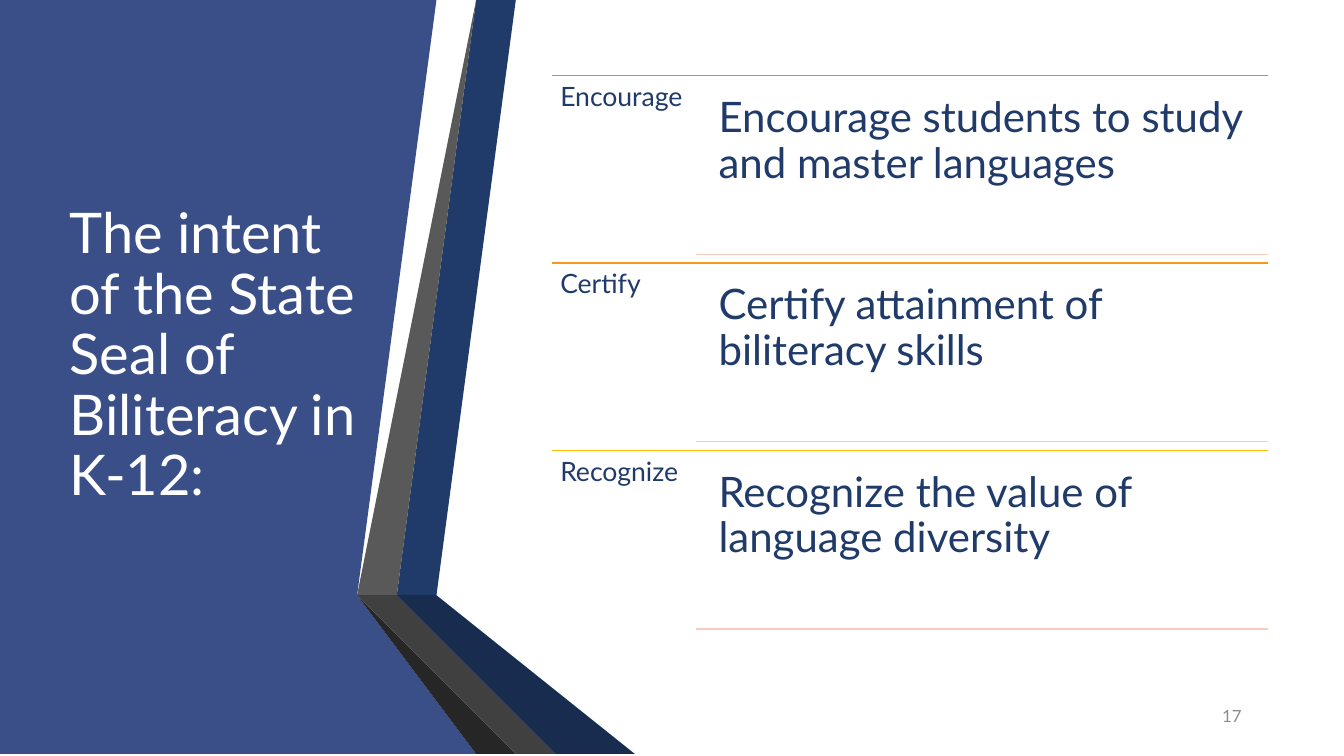
from lxml.etree import SubElement
from pptx import Presentation
from pptx.dml.color import RGBColor
from pptx.enum.shapes import MSO_CONNECTOR
from pptx.enum.text import MSO_ANCHOR, MSO_AUTO_SIZE, PP_ALIGN
from pptx.oxml.ns import qn
from pptx.util import Cm, Pt

PAGE_WIDTH, PAGE_HEIGHT = 33.87, 19.05
FONT = "Lato"
COLORS = {
    "panel": "3A4F88",
    "navy": "203B6A",
    "navy_foot": "182C50",
    "navy_edge": "101D35",
    "gray": "595959",
    "gray_foot": "404040",
    "gray_edge": "262626",
    "orange": "ED7D31",
    "amber": "F59919",
    "gold": "FFC000",
    "divider": "F6CCBE",
    "white": "FFFFFF",
    "number": "8C8C8C",
}

# Outlines in centimetres, from back to front
PANEL = [(8.97, 0), (11.4, 0), (9.04, 14.61), (12.24, PAGE_HEIGHT),
         (0, PAGE_HEIGHT), (0, 0)]
RIBBONS = [
    ("navy", [(10.06, 14.68), (10.74, 14.81), (13.18, 0), (12.47, 0)]),
    ("gray", [(12.32, 0), (11.61, 0), (9.22, 14.55), (9.91, 14.66)]),
    ("gray_edge", [(9.22, 14.55), (12.47, PAGE_HEIGHT), (12.62, PAGE_HEIGHT)]),
    ("navy_edge", [(10.06, 14.71), (14.07, PAGE_HEIGHT), (14.22, PAGE_HEIGHT)]),
    ("navy_foot", [(10.06, 14.71), (14.22, PAGE_HEIGHT), (15.98, PAGE_HEIGHT),
                   (10.74, 14.81), (10.06, 14.68)]),
    ("gray_foot", [(13.92, PAGE_HEIGHT), (10.03, 14.81), (9.88, 14.68),
                   (9.91, 14.66), (9.22, 14.55), (12.62, PAGE_HEIGHT)]),
]
INTENTS = [
    ("Encourage", "Encourage students to study and master languages", "orange"),
    ("Certify", "Certify attainment of biliteracy skills", "amber"),
    ("Recognize", "Recognize the value of language diversity", "gold"),
]


def rgb(name):
    return RGBColor.from_string(COLORS[name])


def add_outline(page, points, color):
    builder = page.shapes.build_freeform(*points[0], scale=Cm(1))
    builder.add_line_segments(points[1:], close=True)
    outline = builder.convert_to_shape()
    outline.shadow.inherit = False
    outline.fill.solid()
    outline.fill.fore_color.rgb = rgb(color)
    outline.line.fill.background()


def add_rule(page, left, right, top, color):
    rule = page.shapes.add_connector(
        MSO_CONNECTOR.STRAIGHT, Cm(left), Cm(top), Cm(right), Cm(top))
    rule.line.color.rgb = rgb(color)
    rule.line.width = Pt(1)
    SubElement(rule._element.spPr, qn("a:effectLst"))


def fill_text(box, text, size, color, align=PP_ALIGN.LEFT,
              anchor=MSO_ANCHOR.TOP, spacing=0.9):
    frame = box.text_frame
    frame.text = text
    frame.word_wrap = True
    frame.auto_size = MSO_AUTO_SIZE.NONE
    frame.vertical_anchor = anchor
    para = frame.paragraphs[0]
    para.alignment = align
    para.line_spacing = spacing
    for span in para.runs:
        span.font.name = FONT
        span.font.size = Pt(size)
        span.font.color.rgb = rgb(color)


def add_text(page, left, top, width, height, inset, text, size, color, **style):
    box = page.shapes.add_textbox(Cm(left), Cm(top), Cm(width), Cm(height))
    frame = box.text_frame
    frame.margin_left = frame.margin_right = Cm(inset)
    frame.margin_top = frame.margin_bottom = Cm(inset)
    fill_text(box, text, size, color, **style)


def place_title(page, left, top, width, height):
    title = page.shapes.title
    title.left, title.top = Cm(left), Cm(top)
    title.width, title.height = Cm(width), Cm(height)
    fill_text(title, "The intent of the State Seal of Biliteracy in K-12:",
              40, "white", anchor=MSO_ANCHOR.MIDDLE)


def add_side_panel(page):
    add_outline(page, PANEL, "panel")
    for color, points in RIBBONS:
        add_outline(page, points, color)


def add_intent(page, left, top, width, height, label, detail, color):
    """Draw one row: a coloured rule, its keyword, the sentence and a divider."""
    label_width, gap = 3.61, 0.22
    right = left + width
    detail_left = left + label_width + 0.28
    detail_height = height - 2 * gap
    add_rule(page, left, right, top, color)
    add_text(page, left, top, label_width, height, 0.2, label, 19, "navy")
    add_text(page, detail_left, top + gap, right - detail_left, detail_height,
             0.3, detail, 30, "navy")
    add_rule(page, left + label_width, right, top + height - gap, "divider")


def add_intents(page, left, top, width, height):
    row_height = height / len(INTENTS)
    for index, intent in enumerate(INTENTS):
        add_intent(page, left, top + index * row_height, width, row_height, *intent)


def main():
    deck = Presentation()
    deck.slide_width, deck.slide_height = Cm(PAGE_WIDTH), Cm(PAGE_HEIGHT)
    page = deck.slides.add_slide(deck.slide_layouts.get_by_name("Title Only"))
    add_side_panel(page)
    # The title is created with the page, so bring it in front of the panel
    page.shapes._spTree.append(page.shapes.title._element)
    place_title(page, 1.5, 1.9, 7.72, 14.17)
    add_text(page, 28.52, 17.53, 3.02, 1.02, 0.25, "17", 12, "number",
             align=PP_ALIGN.RIGHT, anchor=MSO_ANCHOR.MIDDLE, spacing=1)
    add_intents(page, 13.92, 1.91, 18.03, 14.16)
    deck.save("out.pptx")


if __name__ == "__main__":
    main()
